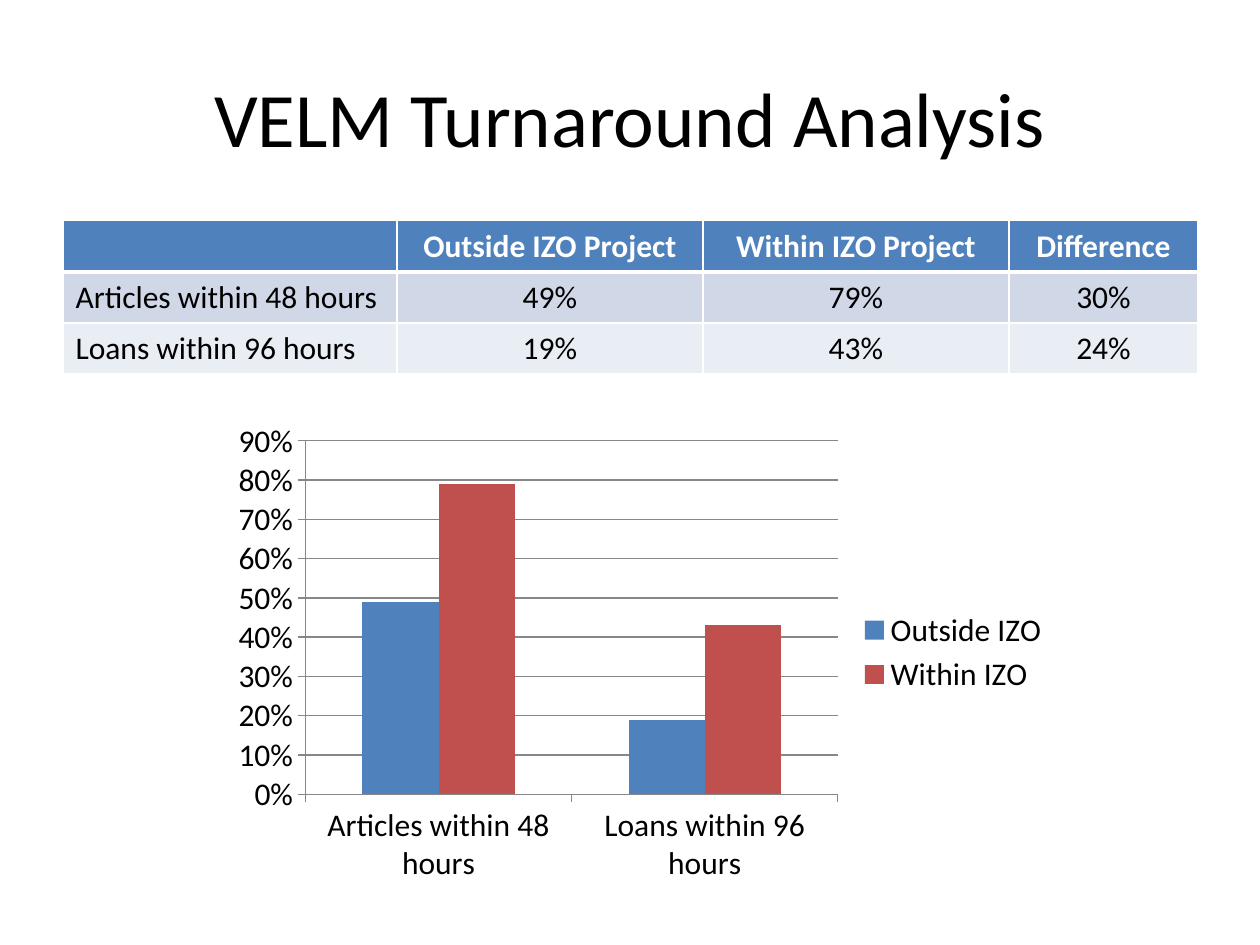
from lxml import etree
from pptx import Presentation
from pptx import util as u
from pptx.chart.data import CategoryChartData
from pptx.dml.color import RGBColor
from pptx.enum import chart as charts, text
from pptx.oxml.ns import qn

FONT = "Calibri"
BLACK, WHITE, GRAY = "000000", "FFFFFF", "878787"
BLUE, RED = "4F81BD", "C0504D"
ROW_FILLS = [BLUE, "D0D8E8", "E9EDF4"]

MARGIN, CONTENT_WIDTH = 1.27, 22.86
COLUMN_WIDTHS = [6.73, 6.17, 6.17, 3.81]
ROW_HEIGHT = 1.03

CATEGORIES = ["Articles within 48 hours", "Loans within 96 hours"]
SERIES = [("Outside IZO", [0.49, 0.19], BLUE), ("Within IZO", [0.79, 0.43], RED)]


def color(hex_value):
    return RGBColor.from_string(hex_value)


def box(*lengths):
    return [u.Cm(length) for length in lengths]


def set_font(font, size=18, hex_value=BLACK, bold=False):
    font.name, font.size, font.bold = FONT, u.Pt(size), bold
    font.color.rgb = color(hex_value)


def write_text(frame, content, align=text.PP_ALIGN.CENTER, **font_format):
    paragraph = frame.paragraphs[0]
    paragraph.alignment = align
    run = paragraph.add_run()
    run.text = content
    set_font(run.font, **font_format)


def add_title(slide, content):
    shape = slide.shapes.add_textbox(*box(MARGIN, 0.76, CONTENT_WIDTH, 3.18))
    shape.text_frame.word_wrap = True
    shape.text_frame.vertical_anchor = text.MSO_ANCHOR.MIDDLE
    write_text(shape.text_frame, content, size=44)


def set_borders(cell, **widths):
    """Draw white cell borders; widths are points by side (L, R, T, B)."""
    properties = cell._tc.get_or_add_tcPr()
    for position, (side, width) in enumerate(widths.items()):
        line = etree.Element(qn(f"a:ln{side}"), w=str(u.Pt(width)))
        fill = etree.SubElement(line, qn("a:solidFill"))
        etree.SubElement(fill, qn("a:srgbClr"), val=WHITE)
        properties.insert(position, line)


def add_table(slide, rows):
    table = slide.shapes.add_table(
        len(rows), len(COLUMN_WIDTHS),
        *box(MARGIN, 4.45, sum(COLUMN_WIDTHS), ROW_HEIGHT * len(rows))).table
    for column, width in zip(table.columns, COLUMN_WIDTHS):
        column.width = u.Cm(width)
    for row_index, values in enumerate(rows):
        table.rows[row_index].height = u.Cm(ROW_HEIGHT)
        header = row_index == 0
        for column_index, value in enumerate(values):
            cell = table.cell(row_index, column_index)
            cell.fill.solid()
            cell.fill.fore_color.rgb = color(ROW_FILLS[row_index])
            set_borders(cell, L=1, R=1, T=3 if row_index == 1 else 1,
                        B=3 if header else 1)
            if value:
                align = text.PP_ALIGN.CENTER if column_index else text.PP_ALIGN.LEFT
                write_text(cell.text_frame, value, align=align, bold=header,
                           hex_value=WHITE if header else BLACK)


def format_line(line):
    line.color.rgb = color(GRAY)
    line.width = u.Pt(0.75)


def add_column_chart(slide):
    data = CategoryChartData(number_format="0%")
    data.categories = CATEGORIES
    for name, values, _ in SERIES:
        data.add_series(name, values)
    chart = slide.shapes.add_chart(
        charts.XL_CHART_TYPE.COLUMN_CLUSTERED, *box(4.47, 8.31, 16.94, 9.68), data).chart
    chart.has_title = False
    set_font(chart.font)

    # Columns
    plot = chart.plots[0]
    plot.vary_by_categories = False
    plot.gap_width, plot.overlap = 150, 0
    for series, (_, _, fill) in zip(plot.series, SERIES):
        series.format.fill.solid()
        series.format.fill.fore_color.rgb = color(fill)

    # Axes and gridlines
    for axis in (chart.category_axis, chart.value_axis):
        axis.major_tick_mark = charts.XL_TICK_MARK.OUTSIDE
        format_line(axis.format.line)
    value_axis = chart.value_axis
    value_axis.minimum_scale, value_axis.maximum_scale = 0, 0.9
    value_axis.major_unit = 0.1
    value_axis.tick_labels.number_format = "0%"
    value_axis.tick_labels.number_format_is_linked = False
    value_axis.has_major_gridlines = True
    format_line(value_axis.major_gridlines.format.line)

    # Legend
    chart.has_legend = True
    chart.legend.position = charts.XL_LEGEND_POSITION.RIGHT
    chart.legend.include_in_layout = False


def main():
    presentation = Presentation()
    presentation.slide_width, presentation.slide_height = box(25.4, 19.05)
    slide = presentation.slides.add_slide(presentation.slide_layouts[6])

    add_title(slide, "VELM Turnaround Analysis")
    add_table(slide, [
        ["", "Outside IZO Project", "Within IZO Project", "Difference"],
        [CATEGORIES[0], "49%", "79%", "30%"],
        [CATEGORIES[1], "19%", "43%", "24%"],
    ])
    add_column_chart(slide)
    presentation.save("out.pptx")


if __name__ == "__main__":
    main()
